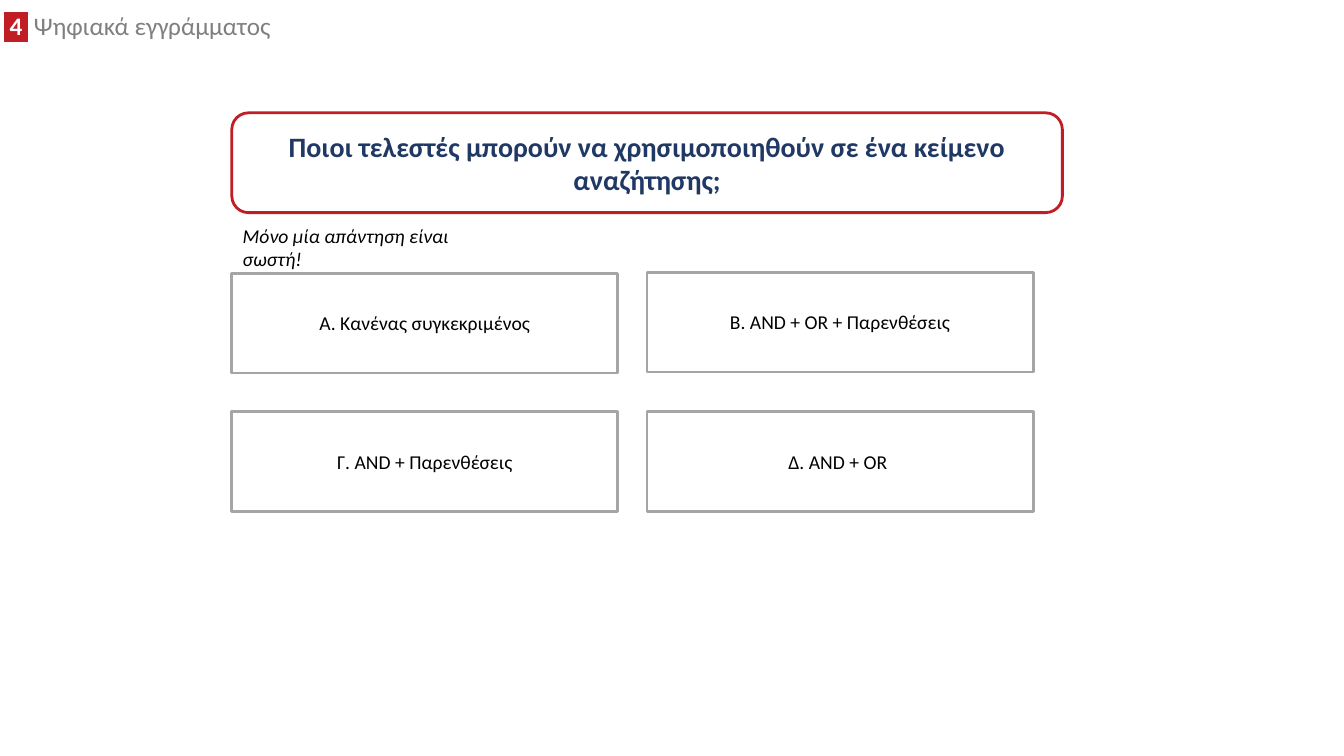
import pptx
import pptx.util
import pptx.dml.color
import pptx.enum.shapes
import pptx.enum.text
import pptx.oxml
import pptx.oxml.ns

Pt = pptx.util.Pt
Shape = pptx.enum.shapes.MSO_SHAPE
Align = pptx.enum.text.PP_ALIGN
Anchor = pptx.enum.text.MSO_ANCHOR

number = " 4 "
topic = " Ψηφιακά εγγράμματος"
question = "Ποιοι τελεστές μπορούν να χρησιμοποιηθούν σε ένα κείμενο αναζήτησης;"
hint = "Μόνο μία απάντηση είναι σωστή!"
answers = [
    ("Α. Κανένας συγκεκριμένος", 0, 195.1),
    ("Β. AND + OR + Παρενθέσεις", 1, 194.4),
    ("Γ. AND + Παρενθέσεις", 0, 293.8),
    ("Δ. AND + OR ", 1, 293.8),
]
red, navy, gray, edge = "C01E24", "203864", "7F7F7F", "A5A5A5"
left, step = 165.6, 296.6
width, height = 275.8, 71.3


def color(code):
    return pptx.dml.color.RGBColor.from_string(code)


def style(run, size, code, bold=False, italic=False):
    font = run.font
    font.size, font.bold, font.italic = Pt(size), bold, italic
    font.color.rgb = color(code)
    font.name = "Calibri"


def mark(run, code):
    tag = pptx.oxml.parse_xml(
        f'<a:highlight {pptx.oxml.ns.nsdecls("a")}>'
        f'<a:srgbClr val="{code}"/></a:highlight>'
    )
    run.font.fill._xPr.find(pptx.oxml.ns.qn("a:solidFill")).addnext(tag)


def add_box(kind, place, text, line, size, code, bold=False):
    box = slide.shapes.add_shape(kind, *map(Pt, place))
    box.shadow.inherit = False
    box.fill.solid()
    box.fill.fore_color.rgb = color("FFFFFF")
    box.line.color.rgb = color(line)
    box.line.width = Pt(2)
    frame = box.text_frame
    frame.text = text
    frame.word_wrap = True
    frame.vertical_anchor = Anchor.MIDDLE
    para = frame.paragraphs[0]
    para.alignment = Align.CENTER
    style(para.runs[0], size, code, bold)


deck = pptx.Presentation()
deck.slide_width, deck.slide_height = Pt(960), Pt(540)
slide = deck.slides.add_slide(deck.slide_layouts[5])

title = slide.shapes.title
title.left, title.top, title.width, title.height = map(Pt, (-4.3, 7.9, 685.4, 25.2))
frame = title.text_frame
frame.auto_size = pptx.enum.text.MSO_AUTO_SIZE.NONE
frame.vertical_anchor = Anchor.TOP
head = frame.paragraphs[0]
head.alignment = Align.LEFT
head.line_spacing = 0.8
for text, code, bold in [(number, "FFFFFF", True), (topic, gray, False)]:
    run = head.add_run()
    run.text = text
    style(run, 18, code, bold)
mark(head.runs[0], red)

add_box(Shape.ROUNDED_RECTANGLE, (left, 80.6, 593.3, height), question, red, 20, navy, True)
for text, col, top in answers:
    place = (left + col * step, top, width, height)
    add_box(Shape.RECTANGLE, place, text, edge, 14, "000000")

note = slide.shapes.add_textbox(*map(Pt, (166.3, 156.2, 169.9, 24.5))).text_frame
note.word_wrap = True
note.text = hint
style(note.paragraphs[0].runs[0], 14, "000000", italic=True)

deck.save("out.pptx")
